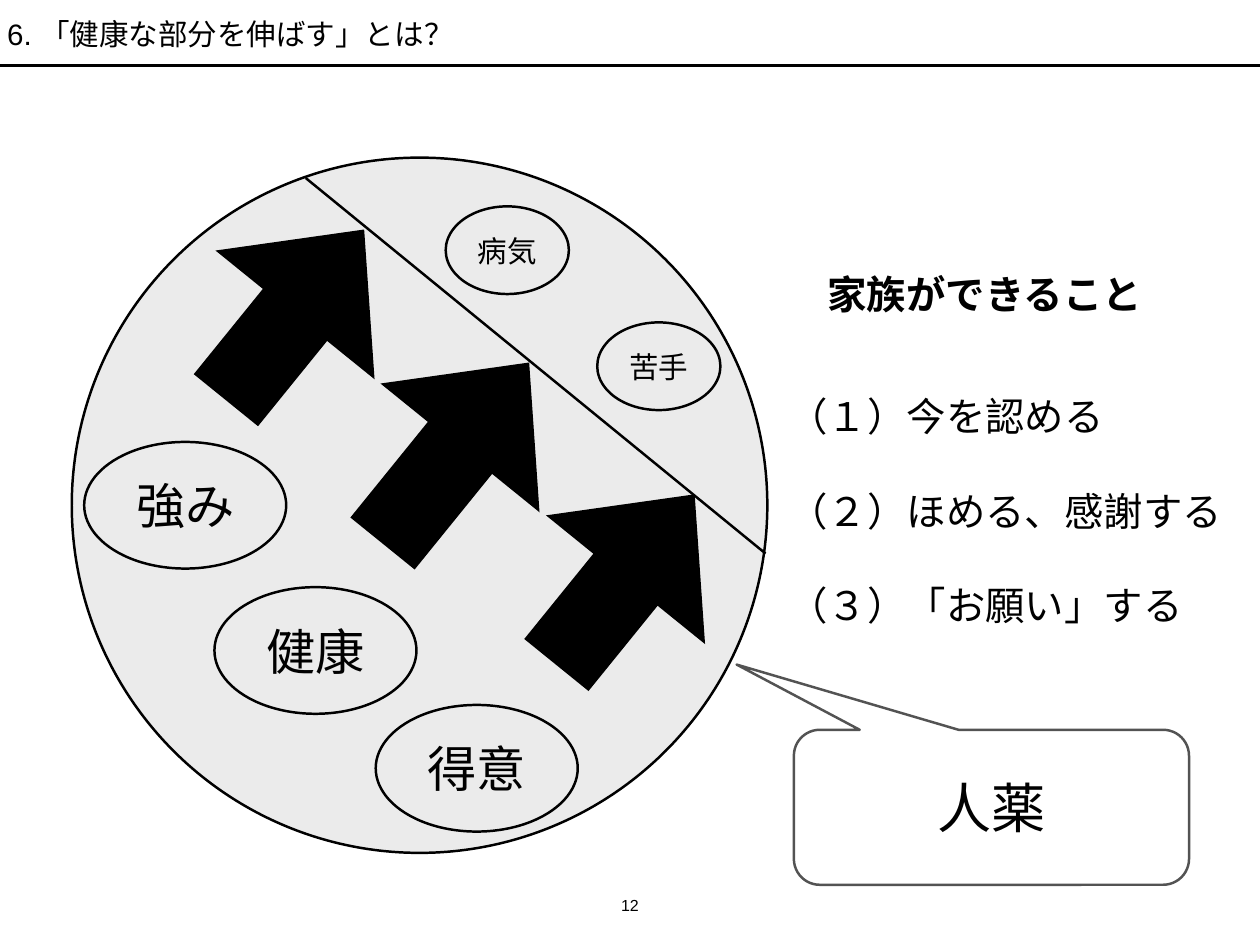
from dataclasses import dataclass

from lxml import etree
from pptx import Presentation
from pptx.dml.color import RGBColor
from pptx.enum.shapes import MSO_CONNECTOR, MSO_SHAPE
from pptx.enum.text import MSO_ANCHOR, MSO_AUTO_SIZE, PP_ALIGN
from pptx.oxml.ns import qn
from pptx.util import Inches, Pt

LINE = MSO_CONNECTOR.STRAIGHT
OVAL = MSO_SHAPE.OVAL
ARROW = MSO_SHAPE.RIGHT_ARROW
BUBBLE = MSO_SHAPE.ROUNDED_RECTANGULAR_CALLOUT
MIDDLE, BOTTOM = MSO_ANCHOR.MIDDLE, MSO_ANCHOR.BOTTOM
GROW, FIXED = MSO_AUTO_SIZE.SHAPE_TO_FIT_TEXT, MSO_AUTO_SIZE.NONE
LEFT, CENTER = PP_ALIGN.LEFT, PP_ALIGN.CENTER


@dataclass(frozen=True)
class Theme:
    """Colours, font and type sizes of the slide."""
    ink: str = "000000"
    disc: str = "EBEBEB"
    paper: str = "FFFFFF"
    edge: str = "535353"
    font: str = "Arial"
    page: int = 13
    small: int = 24
    body: int = 32
    large: int = 40
    huge: int = 44
    rule: int = 2
    inset: float = 0.06
    pitch: float = 1.2


THEME = Theme()


def color(code):
    """Turn a hex code into a colour."""
    return RGBColor.from_string(code)


def put_text(shape, *lines, size, bold=False, align=CENTER, anchor=MIDDLE,
             inset=THEME.inset, fit=FIXED, pitch=None, gap=0):
    """Write lines into a shape, one paragraph each."""
    frame = shape.text_frame
    frame.text = "\n".join(lines)
    frame.word_wrap = True
    frame.auto_size = fit
    frame.vertical_anchor = anchor
    frame.margin_left = frame.margin_right = Inches(inset)
    frame.margin_top = frame.margin_bottom = Inches(inset)
    for row, para in enumerate(frame.paragraphs):
        para.alignment = align
        if pitch:
            para.line_spacing = Pt(size * pitch)
        para.space_before = Pt(gap if row else 0)
        font = para.runs[0].font
        font.name, font.size, font.bold = THEME.font, Pt(size), bold
        font.color.rgb = color(THEME.ink)


def add_text(slide, box, *lines, **style):
    """Add a text box in the given box."""
    shape = slide.shapes.add_textbox(*map(Inches, box))
    put_text(shape, *lines, **style)


def add_form(slide, kind, box, fill=None, line=None, adjust=()):
    """Add a flat preset shape in the given box."""
    shape = slide.shapes.add_shape(kind, *map(Inches, box))
    shape.shadow.inherit = False
    if fill:
        shape.fill.solid()
        shape.fill.fore_color.rgb = color(fill)
    else:
        shape.fill.background()
    if line:
        shape.line.color.rgb = color(line)
        shape.line.width = Pt(THEME.rule)
    else:
        shape.line.fill.background()
    for spot, value in enumerate(adjust):
        shape.adjustments[spot] = value
    return shape


def add_line(slide, *ends):
    """Add a straight black line."""
    line = slide.shapes.add_connector(LINE, *map(Inches, ends))
    line.line.color.rgb = color(THEME.ink)
    line.line.width = Pt(THEME.rule)
    etree.SubElement(line._element.spPr, qn("a:effectLst"))


def head(slide, box):
    """Place the title and the rule across the slide."""
    left, top, width, _ = box
    add_line(slide, left, top + 0.74, left + width, top + 0.74)
    title = slide.shapes.title
    title.left, title.top = Inches(left), Inches(top + 0.12)
    title.width, title.height = Inches(5.2), Inches(0.52)
    put_text(title, "6. 「健康な部分を伸ばす」とは？", size=THEME.small,
             fit=GROW, pitch=THEME.pitch)


def circle(slide, box):
    """Draw the disc with its divide, arrows and labelled ovals."""
    left, top, _, _ = box
    add_form(slide, OVAL, box, THEME.disc, THEME.ink)
    add_line(slide, left + 2.64, top + 0.23, left + 7.83, top + 4.47)
    for x, y, width in ((3.02, 2.18, 2.63), (5.01, 3.61, 2.48),
                        (1.28, 0.62, 2.48)):
        arrow = add_form(slide, ARROW, (left + x, top + y, width, 2.31),
                         THEME.ink, adjust=(0.404, 0.537))
        arrow.rotation = 309
    weak = (1.39, 0.99, THEME.small)
    strong = (2.28, 1.43, THEME.large)
    for word, x, y, (width, height, size) in (
            ("病気", 4.22, 0.55, weak), ("苦手", 5.93, 1.86, weak),
            ("強み", 0.14, 3.21, strong), ("健康", 1.61, 4.85, strong),
            ("得意", 3.43, 6.18, strong)):
        oval = add_form(slide, OVAL, (left + x, top + y, width, height),
                        line=THEME.ink)
        put_text(oval, word, size=size)


def advice(slide, box):
    """Place the heading, the three points and the callout."""
    left, top, _, _ = box
    add_text(slide, (left + 0.12, top, 4.31, 0.65), "家族ができること",
             size=THEME.body, bold=True, fit=GROW)
    add_text(slide, (left, top + 1.37, 5.13, 2.81), "（１）今を認める",
             "（２）ほめる、感謝する", "（３）「お願い」する",
             size=THEME.body, align=LEFT, fit=GROW, pitch=THEME.pitch,
             gap=THEME.body * THEME.pitch)
    bubble = add_form(slide, BUBBLE, (left + 0.12, top + 5.25, 4.46, 1.75),
                      THEME.paper, THEME.edge, (-0.645, -0.921, 0.167))
    put_text(bubble, "人薬", size=THEME.huge, inset=0)


def main():
    """Build the slide and save it."""
    deck = Presentation()
    deck.slide_width, deck.slide_height = Inches(14.22), Inches(10.67)
    slide = deck.slides.add_slide(deck.slide_layouts[5])
    head(slide, (0, 0, 14.22, 0.74))
    circle(slide, (0.81, 1.78, 7.85, 7.85))
    advice(slide, (8.84, 2.99, 5.13, 7))
    add_text(slide, (6.86, 10.08, 0.5, 0.31), "12", size=THEME.page,
             anchor=BOTTOM, fit=GROW)
    deck.save("out.pptx")


if __name__ == "__main__":
    main()
